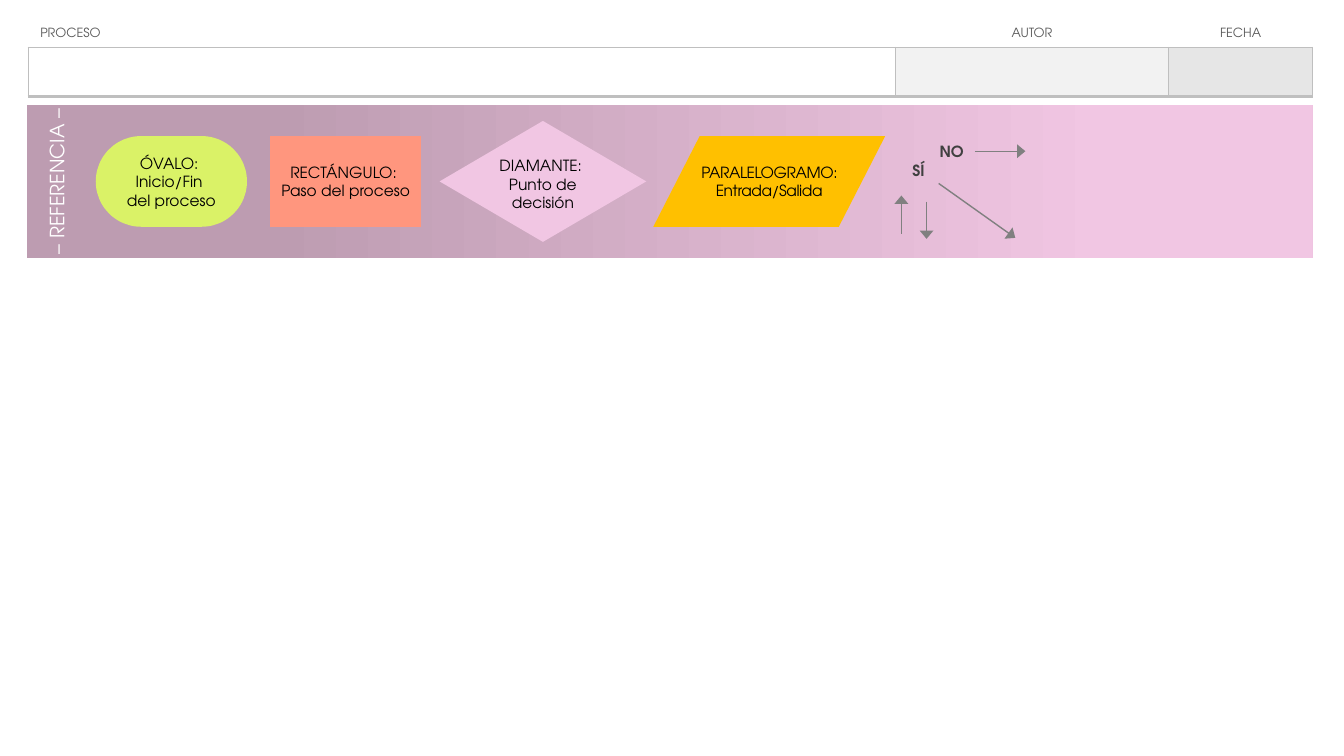
from dataclasses import dataclass

from lxml.etree import SubElement
from pptx import Presentation
from pptx.dml.color import RGBColor
from pptx.enum.shapes import MSO_CONNECTOR, MSO_SHAPE
from pptx.enum.text import MSO_ANCHOR, PP_ALIGN
from pptx.oxml.ns import qn
from pptx.util import Inches, Pt


@dataclass(frozen=True)
class Theme:
    font: str = "TeX Gyre Adventor"
    header_size: float = 9
    body_size: float = 11
    title_size: float = 14
    header: str = "595959"
    border: str = "BFBFBF"
    arrow: str = "808080"
    answer: str = "404040"
    black: str = "000000"
    white: str = "FFFFFF"
    band: tuple = ((0.19, "BD9CB1"), (0.84, "F1C6E3"))


THEME = Theme()

# Header table: label, column width, fill of the entry cell, alignment, left margin
COLUMNS = [
    ("PROCESO", 8.6, "FFFFFF", PP_ALIGN.LEFT, 0.12),
    ("AUTOR", 2.71, "F2F2F2", PP_ALIGN.CENTER, 0.01),
    ("FECHA", 1.43, "E6E6E6", PP_ALIGN.CENTER, 0.01),
]
ROWS = (0.28, 0.49)
TABLE_AT = (0.28, 0.19)

BAND_LEFT, BAND_WIDTH, BAND_HEIGHT = 0.27, 12.75, 1.52
MIDLINE = 1.8

# Legend: shape, left, width, height, fill, lines, anchor, inset, letter spacing
LEGEND = [
    (MSO_SHAPE.ROUNDED_RECTANGLE, 0.95, 1.5, 0.9, "DAF267",
     ("ÓVALO: ", "Inicio/Fin ", "del proceso"), MSO_ANCHOR.MIDDLE, 0.02, 0),
    (MSO_SHAPE.FLOWCHART_PROCESS, 2.68, 1.5, 0.9, "FF967E",
     ("RECTÁNGULO: ", "Paso del proceso"), MSO_ANCHOR.MIDDLE, 0.02, 0),
    (MSO_SHAPE.FLOWCHART_DATA, 6.48, 2.3, 0.9, "FFC000",
     ("PARALELOGRAMO: ", "Entrada/Salida"), MSO_ANCHOR.MIDDLE, 0, -30),
    (MSO_SHAPE.FLOWCHART_DECISION, 4.36, 2.05, 1.2, "F1C6E3",
     ("DIAMANTE: ", "Punto de decisión"), MSO_ANCHOR.BOTTOM, 0, 0),
]
ANSWERS = [("SÍ", 8.8, 1.46), ("NO", 9.13, 1.28)]
ANSWER_SIZE = (0.62, 0.45)
ARROWS = [
    (9.31, 1.82, 10.07, 2.36),
    (9.67, 1.5, 10.17, 1.5),
    (8.94, 2.32, 8.94, 1.94),
    (9.19, 2, 9.19, 2.37),
]


def inches(*values):
    return [Inches(v) for v in values]


def assign(obj, values):
    for name, value in values.items():
        setattr(obj, name, value)


def paint(fill, color):
    fill.solid()
    fill.fore_color.rgb = RGBColor.from_string(color)


def write(tf, lines, size, color, align=PP_ALIGN.CENTER, bold=False, spacing=0):
    for i, line in enumerate(lines):
        p = tf.paragraphs[0] if i == 0 else tf.add_paragraph()
        p.alignment = align
        r = p.add_run()
        r.text = line
        assign(r.font, {"name": THEME.font, "size": Pt(size), "bold": bold})
        r.font.color.rgb = RGBColor.from_string(color)
        if spacing:
            r.font._element.set("spc", str(spacing))


def frame(tf, inset, anchor=MSO_ANCHOR.MIDDLE):
    assign(tf, {"word_wrap": True, "vertical_anchor": anchor})
    assign(tf, {f"margin_{side}": Inches(inset)
                for side in ("left", "top", "right", "bottom")})


def set_borders(cell, widths):
    """Draw the cell sides given as {tag: points}, in schema order."""
    tc_pr = cell._tc.get_or_add_tcPr()
    for i, (tag, width) in enumerate(widths.items()):
        ln = SubElement(tc_pr, qn(f"a:{tag}"), w=str(Pt(width)))
        fill = SubElement(ln, qn("a:solidFill"))
        SubElement(fill, qn("a:srgbClr"), val=THEME.border)
        tc_pr.insert(i, ln)


def add_band(shapes):
    sp = shapes.add_shape(MSO_SHAPE.RECTANGLE, *inches(
        BAND_LEFT, MIDLINE - BAND_HEIGHT / 2, BAND_WIDTH, BAND_HEIGHT))
    sp.shadow.inherit = False
    sp.line.fill.background()
    sp.fill.gradient()
    sp.fill.gradient_angle = 0
    for stop, (position, color) in zip(sp.fill.gradient_stops, THEME.band):
        stop.position = position
        stop.color.rgb = RGBColor.from_string(color)


def add_header(shapes):
    width = sum(column[1] for column in COLUMNS)
    table = shapes.add_table(len(ROWS), len(COLUMNS),
                             *inches(*TABLE_AT, width, sum(ROWS))).table
    assign(table, {"first_row": False, "horz_banding": False})
    style = table._tbl.tblPr.find(qn("a:tableStyleId"))
    style.text = "{2D5ABB26-0587-4C30-8999-92F81FD0307C}"
    for row, height in zip(table.rows, ROWS):
        row.height = Inches(height)
    for c, (label, width, fill, align, margin) in enumerate(COLUMNS):
        table.columns[c].width = Inches(width)
        head, entry = table.cell(0, c), table.cell(1, c)
        assign(head, {"margin_left": Inches(margin), "margin_right": Inches(0.01),
                      "margin_top": Inches(0.01), "margin_bottom": 0,
                      "vertical_anchor": MSO_ANCHOR.MIDDLE})
        write(head.text_frame, [label], THEME.header_size, THEME.header, align)
        head.fill.background()
        paint(entry.fill, fill)
        set_borders(head, {"lnB": 1})
        set_borders(entry, {"lnL": 1, "lnR": 1, "lnT": 1, "lnB": 2.25})


def add_label(shapes, text, box, size, color, bold=False):
    sp = shapes.add_textbox(*inches(*box))
    frame(sp.text_frame, 0.02)
    write(sp.text_frame, [text], size, color, bold=bold)
    return sp


def add_legend(shapes):
    for kind, left, width, height, fill, lines, anchor, inset, spacing in LEGEND:
        sp = shapes.add_shape(kind, *inches(left, MIDLINE - height / 2, width, height))
        sp.shadow.inherit = False
        sp.line.fill.background()
        paint(sp.fill, fill)
        if kind == MSO_SHAPE.ROUNDED_RECTANGLE:
            sp.adjustments[0] = 0.5
        frame(sp.text_frame, inset, anchor)
        write(sp.text_frame, lines, THEME.body_size, THEME.black, spacing=spacing)


def add_arrow(shapes, ends):
    cx = shapes.add_connector(MSO_CONNECTOR.STRAIGHT, *inches(*ends))
    cx.line.width = Pt(1)
    cx.line.color.rgb = RGBColor.from_string(THEME.arrow)
    SubElement(cx.line._get_or_add_ln(), qn("a:tailEnd"),
               type="triangle", w="lg", len="med")
    SubElement(cx._element.spPr, qn("a:effectLst"))


def main():
    prs = Presentation()
    assign(prs, {"slide_width": Inches(13.33), "slide_height": Inches(7.5)})
    shapes = prs.slides.add_slide(prs.slide_layouts[6]).shapes
    add_band(shapes)
    add_header(shapes)
    for text, left, top in ANSWERS:
        add_label(shapes, text, (left, top, *ANSWER_SIZE),
                  THEME.body_size, THEME.answer, bold=True)
    title = add_label(shapes, "– REFERENCIA –", (-0.24, MIDLINE - 0.25, 1.6, 0.5),
                      THEME.title_size, THEME.white)
    title.rotation = 270
    add_legend(shapes)
    for ends in ARROWS:
        add_arrow(shapes, ends)
    prs.save("out.pptx")


if __name__ == "__main__":
    main()
